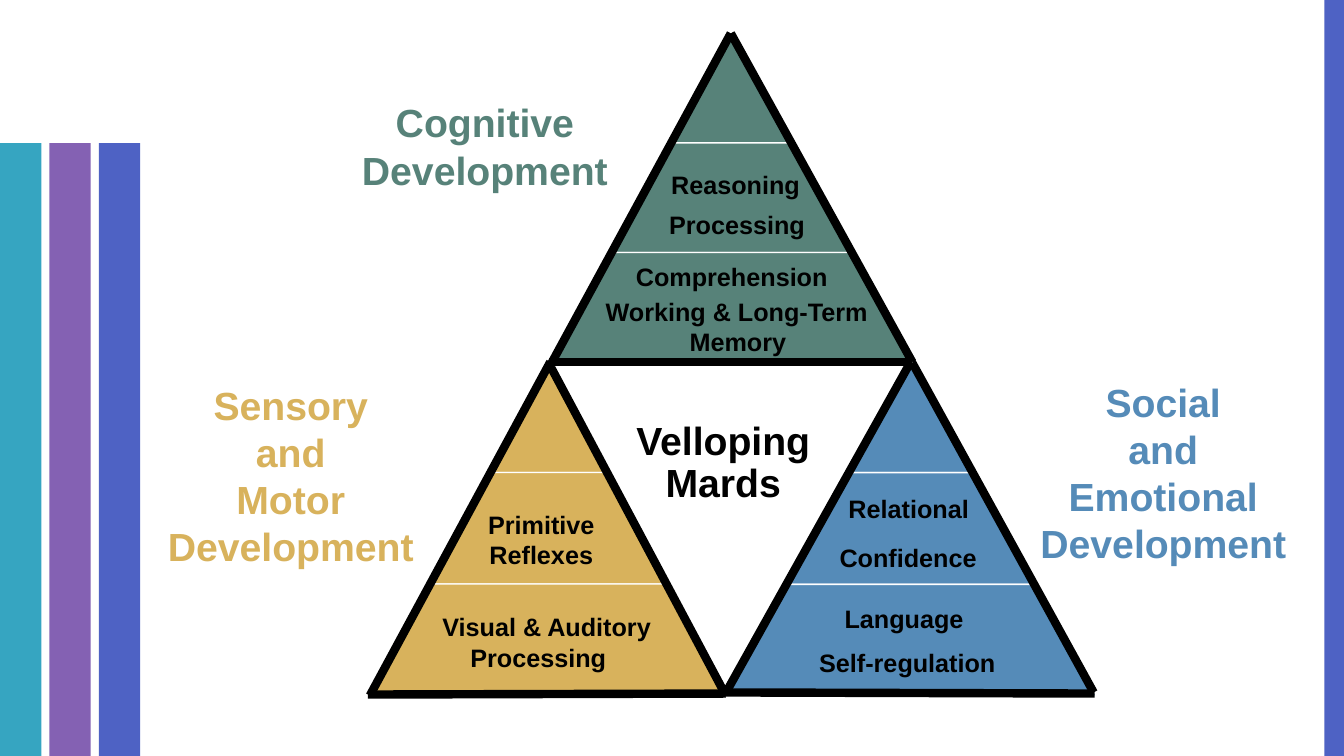
from lxml import etree
from pptx import Presentation
from pptx import util as u
from pptx.dml import color
from pptx.enum import shapes, text
from pptx.oxml import ns

Pt = u.Pt
BLACK, WHITE, INDIGO = "000000", "FFFFFF", "4E62C4"
CENTER, LEFT = text.PP_ALIGN.CENTER, text.PP_ALIGN.LEFT


def paint(target, hex_colour):
    """Give a fill or a line fill one solid colour."""
    target.solid()
    target.fore_color.rgb = color.RGBColor.from_string(hex_colour)


def write(box, place, lines, size, hex_colour, align):
    """Place a box and fill it with (text, left indent) paragraphs."""
    for name, value in zip(("left", "top", "width", "height"), place):
        setattr(box, name, Pt(value))
    frame = box.text_frame
    frame_format = {"word_wrap": True, "auto_size": text.MSO_AUTO_SIZE.NONE,
                    "vertical_anchor": text.MSO_ANCHOR.TOP}
    for name, value in frame_format.items():
        setattr(frame, name, value)
    for number, (words, indent) in enumerate(lines):
        para = frame.add_paragraph() if number else frame.paragraphs[0]
        para.alignment = align
        if indent:
            para._p.get_or_add_pPr().set("marL", str(Pt(indent)))
        span = para.add_run()
        span.text = words
        for name, value in {"name": "Arial", "size": Pt(size), "bold": True}.items():
            setattr(span.font, name, value)
        paint(span.font.fill, hex_colour)


deck = Presentation()
deck.slide_width, deck.slide_height = Pt(960), Pt(540)
page = deck.slides.add_slide(deck.slide_layouts[5])

# Title in the white centre triangle
title = page.shapes.title
write(title, (414.7, 297.4, 203.8, 68.4), [("Velloping Mards", 0)], 28, BLACK, CENTER)
title.text_frame.paragraphs[0].line_spacing = 0.9

# Side bars: one on the right edge, three evenly spaced on the left
bars = [(946, 0, 14, 540, INDIGO)]
for column, bar_colour in enumerate(("36A5C1", "8461B3", INDIGO)):
    bars.append((column * 35.3, 102.2, 29.5, 437.8, bar_colour))
for *place, bar_colour in bars:
    bar = page.shapes.add_shape(shapes.MSO_SHAPE.RECTANGLE, *map(Pt, place))
    bar.shadow.inherit = False
    paint(bar.fill, bar_colour)
    bar.line.fill.background()

# Each triangle: three bands widening by "step" on both sides, edges and texts
triangles = [
    {"colour": "D8B25C", "apex": (391, 257.8), "step": 42.25, "band": 79.7,
     "heading": ((105.8, 268.6, 203.8, 143.3),
                 ["Sensory", "and", "Motor Development"]),
     "labels": [((319.7, 360, 133.9, 51.1), [("Primitive Reflexes", 0)], CENTER),
                ((308.9, 433.4, 179.3, 51.1),
                 [("Visual & Auditory", 0), ("Processing", 20)], LEFT)],
     "edges": [(393.8, 262.8, 516.2, 492.5), (262.8, 496.1, 518.4, 495.4),
               (264.2, 496.8, 393.1, 258.5)]},
    {"colour": "558BB8", "apex": (651, 257.8), "step": 44.05, "band": 79.8,
     "heading": ((725.8, 266.4, 210.2, 143.3),
                 ["Social", "and", "Emotional Development"]),
     "labels": [((553, 458.6, 224.6, 28.8), [("Self-regulation", 25)], LEFT),
                ((599, 348.5, 144.7, 25.9), [("Relational", 0)], LEFT),
                ((596.2, 427.7, 142.6, 28.8), [("Language", 0)], LEFT),
                ((592.6, 383.8, 145.4, 28.8), [("Confidence", 0)], LEFT)],
     "edges": [(650.9, 257.8, 781.2, 494.6), (514.8, 494.6, 781.9, 495.4),
               (519.8, 492.5, 650.9, 257.8)]},
    {"colour": "578279", "apex": (522, 23.8), "step": 43.1, "band": 78.3,
     "heading": ((193, 67, 306.7, 74.9), ["Cognitive Development"]),
     "labels": [((425.5, 208.1, 236.2, 45.4),
                 [("Working & Long-Term", 0), ("Memory", 60)], LEFT),
                ((470.9, 146.2, 146.2, 25.9), [("Processing", 0)], LEFT),
                ((447.1, 182.9, 193.7, 25.9), [("Comprehension", 0)], LEFT),
                ((472.3, 117.4, 125.3, 25.9), [("Reasoning", 0)], LEFT)],
     "edges": [(522, 23.8, 651.6, 258.5), (391.7, 263.5, 522, 23.8),
               (392.4, 258.5, 651.6, 258.5)]},
]

for triangle in triangles:
    place, words = triangle["heading"]
    box = page.shapes.add_textbox(0, 0, 0, 0)
    write(box, place, [(line, 0) for line in words], 28, triangle["colour"], CENTER)

    x, y = triangle["apex"]
    for level in range(3):
        upper, lower = level * triangle["step"], (level + 1) * triangle["step"]
        top = y + level * triangle["band"]
        bottom = top + triangle["band"]
        outline = page.shapes.build_freeform(Pt(x - lower), Pt(bottom))
        corners = [(x - upper, top), (x + upper, top), (x + lower, bottom)]
        outline.add_line_segments([(Pt(a), Pt(b)) for a, b in corners], close=True)
        band = outline.convert_to_shape()
        band.shadow.inherit = False
        paint(band.fill, triangle["colour"])
        paint(band.line.fill, WHITE)
        band.line.width = Pt(1)

    for place, lines, align in triangle["labels"]:
        write(page.shapes.add_textbox(0, 0, 0, 0), place, lines, 18, BLACK, align)

    for ends in triangle["edges"]:
        edge = page.shapes.add_connector(shapes.MSO_CONNECTOR.STRAIGHT, *map(Pt, ends))
        paint(edge.line.fill, BLACK)
        edge.line.width = Pt(6)
        etree.SubElement(edge._element.spPr, ns.qn("a:effectLst"))

deck.save("out.pptx")
